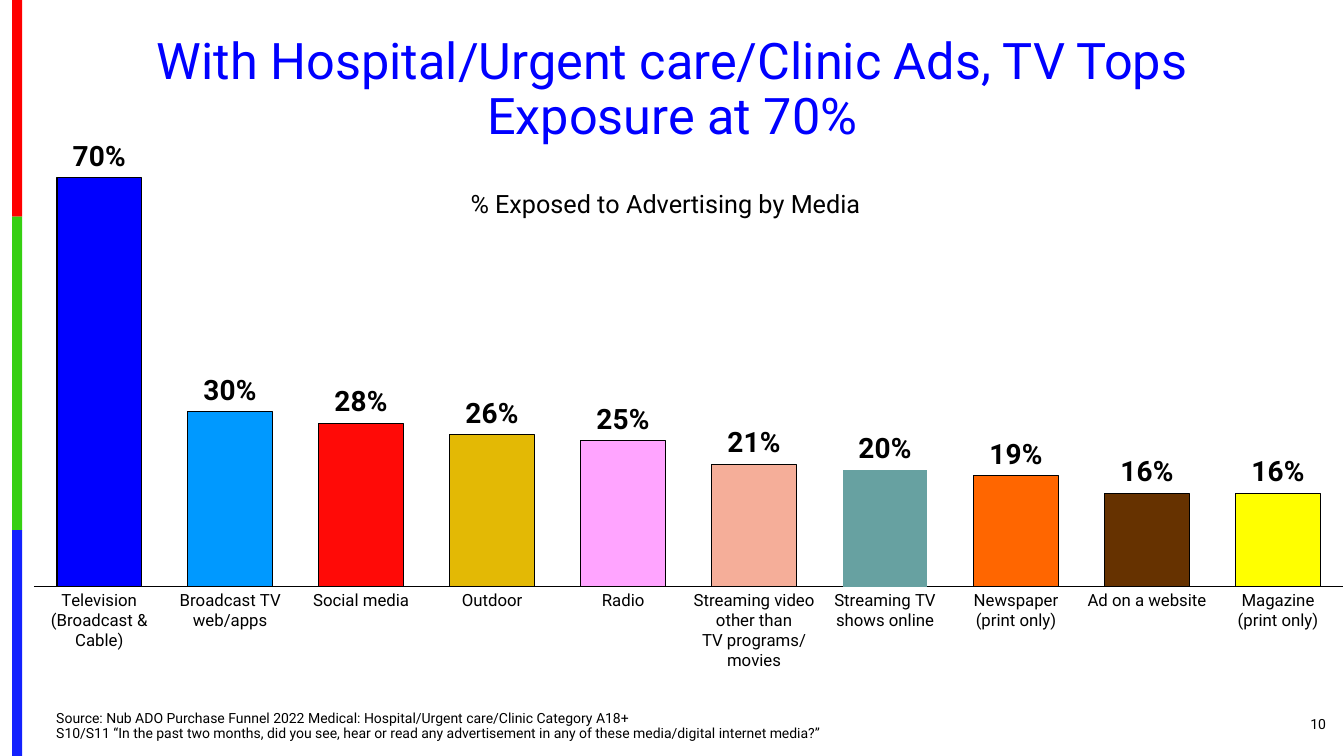
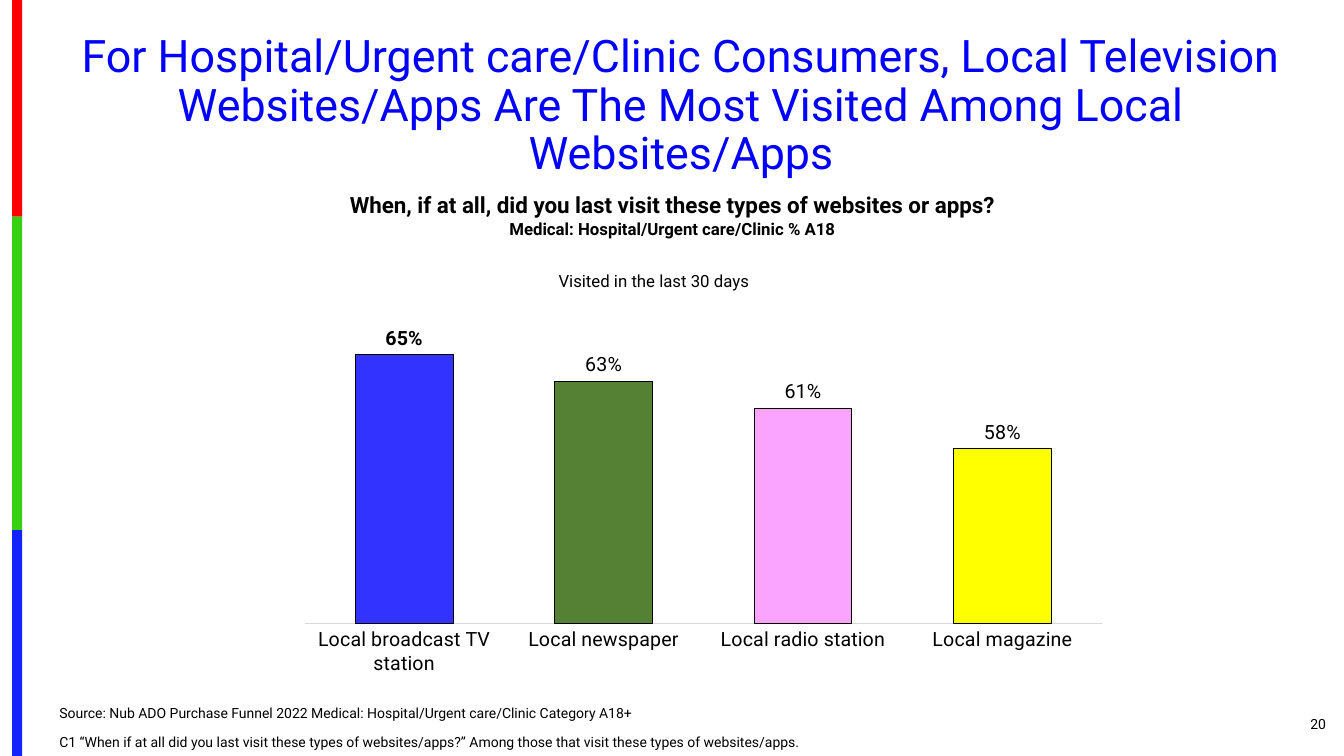
from dataclasses import dataclass
from typing import NamedTuple, Optional

from lxml.etree import SubElement
from pptx import Presentation
from pptx.chart.chart import Chart
from pptx.chart.data import CategoryChartData
from pptx.dml.color import RGBColor
from pptx.enum.chart import XL_CHART_TYPE, XL_LABEL_POSITION, XL_TICK_MARK
from pptx.enum.shapes import MSO_SHAPE
from pptx.enum.text import MSO_ANCHOR, PP_ALIGN
from pptx.oxml.ns import qn
from pptx.slide import Slide
from pptx.util import Inches, Pt


@dataclass(frozen=True)
class Theme:
    font: str = "Roboto"
    ink: str = "000000"
    title: str = "0000FF"
    rule: str = "D9D9D9"
    bands: tuple = ("FE0000", "36CF12", "1322FE")
    note: int = 10
    small: int = 12
    label: int = 14
    lead: int = 16
    head: int = 18
    value: int = 20


THEME = Theme()
SOURCE = "Source: Nub ADO Purchase Funnel 2022 Medical: Hospital/Urgent care/Clinic Category A18+"


class Box(NamedTuple):
    left: float
    top: float
    width: float
    height: float

    def lengths(self) -> list:
        return [Inches(side) for side in self]


class Line(NamedTuple):
    text: str
    size: int
    bold: bool = False
    color: str = THEME.ink
    before: int = 0


class Bar(NamedTuple):
    name: str
    value: float
    color: str
    edge: bool = True
    bold: bool = False


@dataclass(frozen=True)
class Plot:
    box: Box
    title: str
    head: int
    spot: tuple
    inner: Box
    series: str
    bars: list
    low: float
    high: float
    gap: int
    lap: int
    axis: int
    rule: str
    value: int
    bold: bool


@dataclass(frozen=True)
class Page:
    number: int
    title: Line
    place: Box
    foot: Box
    notes: list
    plot: Plot
    lead: Optional[list] = None


def add_text(slide: Slide, box: Box, lines: list, align=PP_ALIGN.LEFT,
             anchor=MSO_ANCHOR.TOP, space: float = 1.0) -> None:
    frame = slide.shapes.add_textbox(*box.lengths()).text_frame
    frame.word_wrap = True
    frame.vertical_anchor = anchor
    for i, line in enumerate(lines):
        para = frame.add_paragraph() if i else frame.paragraphs[0]
        para.text = line.text
        para.alignment = align
        para.line_spacing = space
        para.space_before = Pt(line.before)
        set_font(para.font, line.size, line.bold, line.color)


def set_font(font, size: int, bold: bool = False, color: str = THEME.ink) -> None:
    font.name = THEME.font
    font.size = Pt(size)
    font.bold = bold
    font.color.rgb = RGBColor.from_string(color)


def set_line(line, color: str) -> None:
    line.color.rgb = RGBColor.from_string(color)
    line.width = Pt(0.75)


def add_bands(slide: Slide) -> None:
    edges = (0, 2.15, 5.26, 7.5)
    for color, top, end in zip(THEME.bands, edges, edges[1:]):
        box = Box(0.12, top, 0.1, end - top)
        band = slide.shapes.add_shape(MSO_SHAPE.RECTANGLE, *box.lengths())
        band.shadow.inherit = False
        band.fill.solid()
        band.fill.fore_color.rgb = RGBColor.from_string(color)
        band.line.fill.background()


def set_layout(chart: Chart, tag: str, index: int, **parts) -> None:
    owner = chart.element.find(".//" + qn(tag))
    for old in owner.findall(qn("c:layout")):
        owner.remove(old)
    layout = SubElement(owner, qn("c:layout"))
    owner.insert(index, layout)
    manual = SubElement(layout, qn("c:manualLayout"))
    for key, value in parts.items():
        SubElement(manual, qn("c:" + key)).set("val", str(value))


def add_plot(slide: Slide, plot: Plot) -> None:
    data = CategoryChartData(number_format="0%")
    data.categories = [bar.name for bar in plot.bars]
    data.add_series(plot.series, [bar.value for bar in plot.bars])
    chart = slide.shapes.add_chart(
        XL_CHART_TYPE.COLUMN_CLUSTERED, *plot.box.lengths(), data).chart
    set_font(chart.font, THEME.note)
    chart.has_legend = False
    chart.has_title = True
    para = chart.chart_title.text_frame.paragraphs[0]
    para.text = plot.title
    set_font(para.font, plot.head)

    scale = chart.value_axis
    scale.visible = False
    scale.has_major_gridlines = False
    scale.minimum_scale, scale.maximum_scale = plot.low, plot.high
    base = chart.category_axis
    base.major_tick_mark = XL_TICK_MARK.NONE
    set_font(base.tick_labels.font, plot.axis)
    set_line(base.format.line, plot.rule)

    group = chart.plots[0]
    group.vary_by_categories = False
    group.gap_width, group.overlap = plot.gap, plot.lap
    series = group.series[0]
    labels = series.data_labels
    labels.show_value = True
    labels.number_format = "0%"
    labels.number_format_is_linked = False
    labels.position = XL_LABEL_POSITION.OUTSIDE_END
    set_font(labels.font, plot.value, plot.bold)
    for i, bar in enumerate(plot.bars):
        point = series.points[i]
        point.format.fill.solid()
        point.format.fill.fore_color.rgb = RGBColor.from_string(bar.color)
        if bar.edge:
            set_line(point.format.line, THEME.ink)
        else:
            point.format.line.fill.background()
        if bar.bold:
            set_font(point.data_label.font, plot.value, True)
            point.data_label.position = XL_LABEL_POSITION.OUTSIDE_END

    left, top = plot.spot
    set_layout(chart, "c:title", 1, xMode="edge", yMode="edge", x=left, y=top)
    area = plot.inner
    set_layout(chart, "c:plotArea", 0, layoutTarget="inner", xMode="edge", yMode="edge",
               x=area.left, y=area.top, w=area.width, h=area.height)


def add_page(deck, page: Page) -> None:
    slide = deck.slides.add_slide(deck.slide_layouts[6])
    add_bands(slide)
    add_text(slide, page.place, [page.title], PP_ALIGN.CENTER, space=0.9)
    add_plot(slide, page.plot)
    if page.lead:
        add_text(slide, Box(2.91, 1.85, 7.52, 0.57), page.lead, PP_ALIGN.CENTER)
    add_text(slide, Box(12.17, 6.98, 1.08, 0.4), [Line(str(page.number), THEME.note)],
             PP_ALIGN.RIGHT, MSO_ANCHOR.MIDDLE)
    add_text(slide, page.foot, page.notes, anchor=MSO_ANCHOR.BOTTOM, space=0.9)


MEDIA = Plot(
    box=Box(0.33, 1.01, 13, 5.73),
    title="% Exposed to Advertising by Media", head=THEME.head, spot=(0.33, 0.14),
    inner=Box(0, 0.03, 1, 0.81), series="Series 1",
    bars=[
        Bar("Television\n(Broadcast & Cable)", 0.70, "0000FF"),
        Bar("Broadcast TV web/apps", 0.30, "0099FF"),
        Bar("Social media", 0.28, "FF0A07"),
        Bar("Outdoor", 0.26, "E3B905"),
        Bar("Radio", 0.25, "FFA4FF"),
        Bar("Streaming video\nother than\nTV programs/movies", 0.21, "F5AE99"),
        Bar("Streaming TV\nshows online", 0.20, "67A1A1", edge=False),
        Bar("Newspaper\n(print only)", 0.19, "FF6600"),
        Bar("Ad on a website", 0.16, "663200"),
        Bar("Magazine\n(print only)", 0.16, "FFFF00"),
    ],
    low=0, high=0.8, gap=55, lap=-30, axis=THEME.small, rule=THEME.ink,
    value=THEME.value, bold=True)

SITES = Plot(
    box=Box(2.22, 2.6, 8.89, 4.12),
    title="Visited in the last 30 days", head=THEME.small, spot=(0.37, 0.01),
    inner=Box(0.09, 0.06, 0.89, 0.81), series="Visited in the last 30 days",
    bars=[
        Bar("Local broadcast TV station", 0.65, "3333FF", bold=True),
        Bar("Local newspaper", 0.63, "548134"),
        Bar("Local radio station", 0.61, "FAA4FF"),
        Bar("Local magazine", 0.58, "FFFF00"),
    ],
    low=0.45, high=0.7, gap=104, lap=-27, axis=THEME.label, rule=THEME.rule,
    value=THEME.label, bold=False)

PAGES = [
    Page(
        number=10,
        title=Line("With Hospital/Urgent care/Clinic Ads, TV Tops Exposure at 70%",
                   36, color=THEME.title),
        place=Box(0.46, 0.31, 12.42, 1.19),
        foot=Box(0.46, 7.01, 10.63, 0.4),
        notes=[Line(SOURCE + "\nS10/S11 “In the past two months, did you see, hear or read any "
                    "advertisement in any of these media/digital internet media?”", THEME.note)],
        plot=MEDIA),
    Page(
        number=20,
        title=Line("For Hospital/Urgent care/Clinic Consumers, Local Television Websites/Apps "
                   "Are The Most Visited Among Local Websites/Apps", 32, color=THEME.title),
        place=Box(0.17, 0.29, 13.17, 1.07),
        foot=Box(0.49, 6.96, 9.45, 0.54),
        notes=[
            Line(SOURCE, THEME.note),
            Line("C1 “When if at all did you last visit these types of websites/apps?” "
                 "Among those that visit these types of websites/apps.", THEME.note, before=10),
        ],
        plot=SITES,
        lead=[
            Line("When, if at all, did you last visit these types of websites or apps?",
                 THEME.lead, True),
            Line("Medical: Hospital/Urgent care/Clinic % A18", THEME.small, True),
        ]),
]


def main() -> None:
    deck = Presentation()
    deck.slide_width, deck.slide_height = Inches(13.33), Inches(7.5)
    for page in PAGES:
        add_page(deck, page)
    deck.save("out.pptx")


if __name__ == "__main__":
    main()
